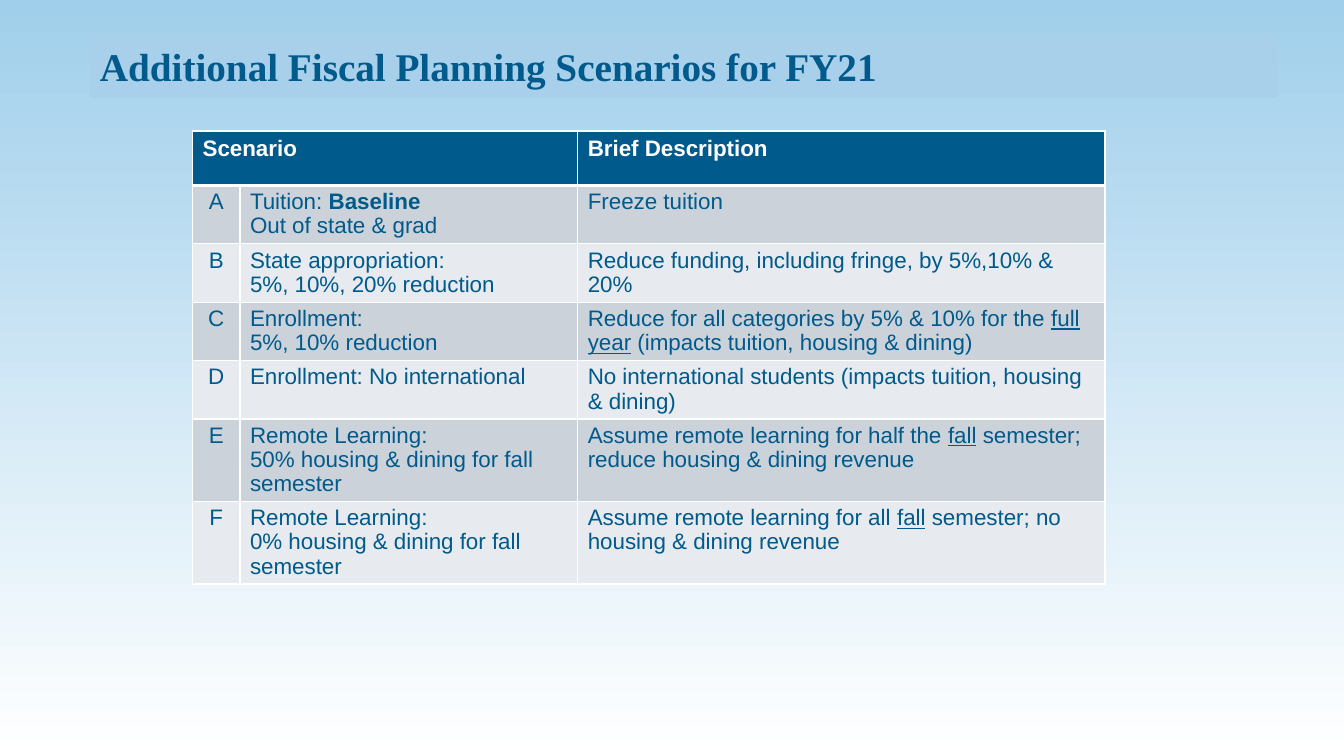
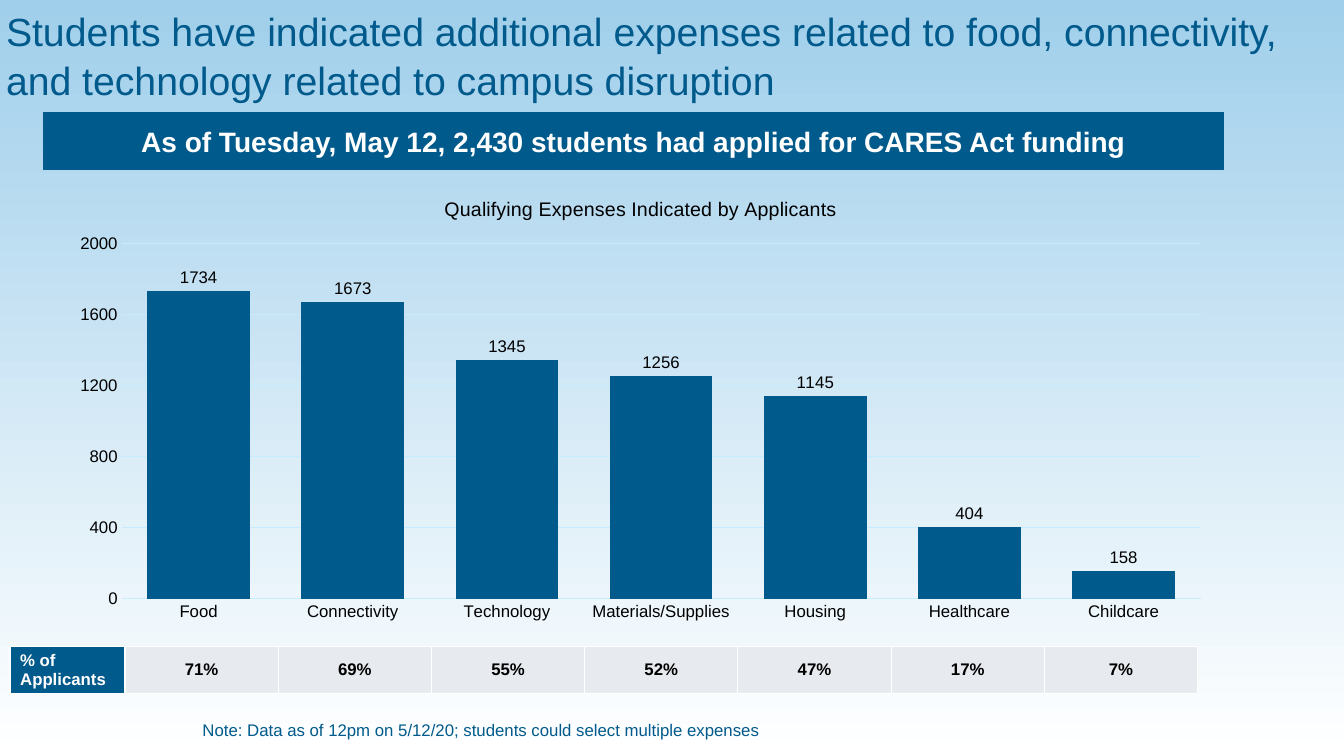
from dataclasses import dataclass

from lxml import etree
from pptx import Presentation
from pptx import util as u
from pptx.chart import data as cd
from pptx.dml.color import RGBColor
from pptx.enum import chart as ec, shapes, text
from pptx.oxml import ns, parse_xml

MIDDLE = text.MSO_ANCHOR.MIDDLE
TOP = text.MSO_ANCHOR.TOP
LEFT = text.PP_ALIGN.LEFT
CENTER = text.PP_ALIGN.CENTER


@dataclass(frozen=True)
class Theme:
    navy: str = "005A8B"
    sky: str = "A0CFEB"
    title_band: str = "A9D0EA"
    grid: str = "C7EBFF"
    row_dark: str = "CCD2DA"
    row_light: str = "E7EAEE"
    white: str = "FFFFFF"
    black: str = "000000"
    sans: str = "Arial"
    serif: str = "Times New Roman"
    title: int = 28
    banner: int = 20
    body: int = 16
    chart_title: int = 14
    small: int = 12


THEME = Theme()


def rgb(value):
    return RGBColor.from_string(value)


def style_font(font, size, color, name=THEME.sans, bold=False, underline=False):
    font.size = u.Pt(size)
    font.name = name
    font.bold = bold
    font.color.rgb = rgb(color)
    if underline:
        font.underline = True


def write(tf, content, size=THEME.body, color=THEME.navy, name=THEME.sans,
          bold=False, align=LEFT, anchor=TOP, spacing=None):
    tf.word_wrap = True
    tf.vertical_anchor = anchor
    paragraphs = [content] if isinstance(content, str) else content
    for i, runs in enumerate(paragraphs):
        p = tf.add_paragraph() if i else tf.paragraphs[0]
        p.alignment = align
        if spacing:
            p.line_spacing = spacing
        for run in [runs] if isinstance(runs, str) else runs:
            words, extra = (run, {}) if isinstance(run, str) else run
            r = p.add_run()
            r.text = words
            style_font(r.font, size, color, name, **{"bold": bold, **extra})


def set_borders(cell, bottom=1):
    tc_pr = cell._tc.get_or_add_tcPr()
    widths = {"lnL": 1, "lnR": 1, "lnT": 1, "lnB": bottom}
    for i, (side, width) in enumerate(widths.items()):
        tc_pr.insert(i, parse_xml(
            f'<a:{side} {ns.nsdecls("a")} w="{u.Pt(width)}"><a:solidFill>'
            f'<a:srgbClr val="{THEME.white}"/></a:solidFill></a:{side}>'))


def set_plot_area(chart, **fractions):
    plot_area = chart._chartSpace.chart.plotArea
    for old in plot_area.findall(ns.qn("c:layout")):
        plot_area.remove(old)
    layout = etree.Element(ns.qn("c:layout"))
    manual = etree.SubElement(layout, ns.qn("c:manualLayout"))
    settings = {"layoutTarget": "inner", "xMode": "edge", "yMode": "edge", **fractions}
    for tag, value in settings.items():
        etree.SubElement(manual, ns.qn(f"c:{tag}")).set("val", str(value))
    plot_area.insert(0, layout)


class Deck:
    def __init__(self, theme):
        self.t = theme
        self.prs = Presentation()
        self.prs.slide_width = u.Inches(13.33)
        self.prs.slide_height = u.Inches(7.5)
        fill = self.prs.slide_master.background.fill
        fill.gradient()
        fill.gradient_angle = 270
        for stop, color in zip(fill.gradient_stops, (theme.sky, theme.white)):
            stop.color.rgb = rgb(color)
        self.s = None

    def slide(self, title, box, fill=None, **fmt):
        self.s = self.prs.slides.add_slide(self.prs.slide_layouts[5])
        sp = self.s.shapes.title
        sp.left, sp.top, sp.width, sp.height = map(u.Inches, box)
        if fill:
            sp.fill.solid()
            sp.fill.fore_color.rgb = rgb(fill)
        sp.text_frame.auto_size = text.MSO_AUTO_SIZE.NONE
        write(sp.text_frame, title, size=self.t.title, **fmt)

    def banner(self, content, box):
        sp = self.s.shapes.add_shape(shapes.MSO_SHAPE.RECTANGLE, *map(u.Inches, box))
        sp.shadow.inherit = False
        sp.fill.solid()
        sp.fill.fore_color.rgb = rgb(self.t.navy)
        sp.line.color.rgb = rgb(self.t.navy)
        sp.line.width = u.Pt(0.75)
        write(sp.text_frame, content, size=self.t.banner, color=self.t.white,
              bold=True, align=CENTER, anchor=MIDDLE)

    def note(self, content, box):
        sp = self.s.shapes.add_textbox(*map(u.Inches, box))
        write(sp.text_frame, content, size=self.t.small)

    def table(self, left, top, cols, rows):
        frame = self.s.shapes.add_table(
            len(rows), len(cols), *map(u.Inches, (left, top, sum(cols), sum(rows))))
        table = frame.table
        for column, width in zip(table.columns, cols):
            column.width = u.Inches(width)
        for row, height in zip(table.rows, rows):
            row.height = u.Inches(height)
        return table

    def cell(self, cell, content, fill, bottom=1, inset=None, **fmt):
        cell.fill.solid()
        cell.fill.fore_color.rgb = rgb(fill)
        set_borders(cell, bottom)
        if inset is not None:
            cell.margin_left = cell.margin_right = u.Inches(inset)
            cell.margin_top = cell.margin_bottom = u.Inches(inset)
        anchor = fmt.pop("anchor", TOP)
        write(cell.text_frame, content, **fmt)
        cell.vertical_anchor = anchor

    def column_chart(self, title, values, box, step, maximum):
        t = self.t
        data = cd.CategoryChartData()
        data.categories = list(values)
        data.add_series("Series 1", list(values.values()))
        chart = self.s.shapes.add_chart(
            ec.XL_CHART_TYPE.COLUMN_CLUSTERED, *map(u.Inches, box), data).chart
        style_font(chart.font, t.small, t.black)
        chart.has_legend = False
        chart.has_title = True
        write(chart.chart_title.text_frame, title, size=t.chart_title,
              color=t.black, align=CENTER)
        set_plot_area(chart, x=0.055, y=0.145, w=0.925, h=0.786)

        plot = chart.plots[0]
        plot.gap_width = 50
        plot.overlap = -27
        plot.vary_by_categories = False
        bars = plot.series[0].format.fill
        bars.solid()
        bars.fore_color.rgb = rgb(t.navy)
        plot.has_data_labels = True
        labels = plot.data_labels
        labels.show_value = True
        labels.position = ec.XL_LABEL_POSITION.OUTSIDE_END
        style_font(labels.font, t.small, t.black)

        value_axis = chart.value_axis
        value_axis.minimum_scale = 0
        value_axis.maximum_scale = maximum
        value_axis.major_unit = step
        value_axis.format.line.fill.background()
        for axis in (chart.category_axis, value_axis):
            axis.major_tick_mark = ec.XL_TICK_MARK.NONE
            style_font(axis.tick_labels.font, t.small, t.black)
        for part in (chart.category_axis, value_axis.major_gridlines):
            part.format.line.color.rgb = rgb(t.grid)
            part.format.line.width = u.Pt(0.75)


def scenarios_slide(deck):
    t = deck.t
    under = {"underline": True}
    rows = [
        (["A"], [["Tuition: ", ("Baseline", {"bold": True})], "Out of state & grad"],
         "Freeze tuition"),
        ("B", ["State appropriation:", "5%, 10%, 20% reduction"],
         "Reduce funding, including fringe, by 5%,10% & 20%"),
        ("C", ["Enrollment:", "5%, 10% reduction"],
         [["Reduce for all categories by 5% & 10% for the ", ("full year", under),
           " (impacts tuition, housing & dining)"]]),
        ("D", "Enrollment: No international",
         "No international students (impacts tuition, housing & dining)"),
        ("E", ["Remote Learning:", "50% housing & dining for fall semester"],
         [["Assume remote learning for half the ", ("fall", under),
           " semester; reduce housing & dining revenue"]]),
        ("F", ["Remote Learning:", "0% housing & dining for fall semester"],
         [["Assume remote learning for all ", ("fall", under),
           " semester; no housing & dining revenue"]]),
    ]
    deck.slide("Additional Fiscal Planning Scenarios for FY21", (0.89, 0.33, 11.78, 0.64),
               fill=t.title_band, name=t.serif, bold=True, anchor=MIDDLE)
    table = deck.table(1.91, 1.3, (0.47, 3.35, 5.23), [0.54] + [0.41] * len(rows))
    table.cell(0, 0).merge(table.cell(0, 1))
    for col, heading in ((0, "Scenario"), (2, "Brief Description")):
        deck.cell(table.cell(0, col), heading, t.navy, bottom=3, color=t.white, bold=True)
    for i, row in enumerate(rows, 1):
        fill = t.row_dark if i % 2 else t.row_light
        for col, content in enumerate(row):
            deck.cell(table.cell(i, col), content, fill, align=LEFT if col else CENTER,
                      spacing=0.97)


def expenses_slide(deck):
    t = deck.t
    applicants = {"Food": 1734, "Connectivity": 1673, "Technology": 1345,
                  "Materials/Supplies": 1256, "Housing": 1145,
                  "Healthcare": 404, "Childcare": 158}
    shares = ("71%", "69%", "55%", "52%", "47%", "17%", "7%")
    deck.slide("Students have indicated additional expenses related to food, connectivity, "
               "and technology related to campus disruption", (-0.04, 0, 13.51, 0.86),
               spacing=1.05)
    deck.column_chart("Qualifying Expenses Indicated by Applicants", applicants,
                      (0.57, 1.77, 11.57, 4.48), step=400, maximum=2000)
    table = deck.table(0.1, 6.41, [1.14] + [1.52] * len(shares), [0.41])
    deck.cell(table.cell(0, 0), "% of Applicants", t.navy, size=t.small,
              color=t.white, bold=True)
    for col, share in enumerate(shares, 1):
        deck.cell(table.cell(0, col), share, t.row_light, inset=0, size=t.small,
                  color=t.black, bold=True, align=CENTER, anchor=MIDDLE)
    deck.note("Note: Data as of 12pm on 5/12/20; students could select multiple expenses",
              (1.91, 7.09, 11.15, 0.3))
    deck.banner("As of Tuesday, May 12, 2,430 students had applied for CARES Act funding",
                (0.43, 1.12, 11.71, 0.56))


def main():
    deck = Deck(THEME)
    scenarios_slide(deck)
    expenses_slide(deck)
    deck.prs.save("out.pptx")


if __name__ == "__main__":
    main()
